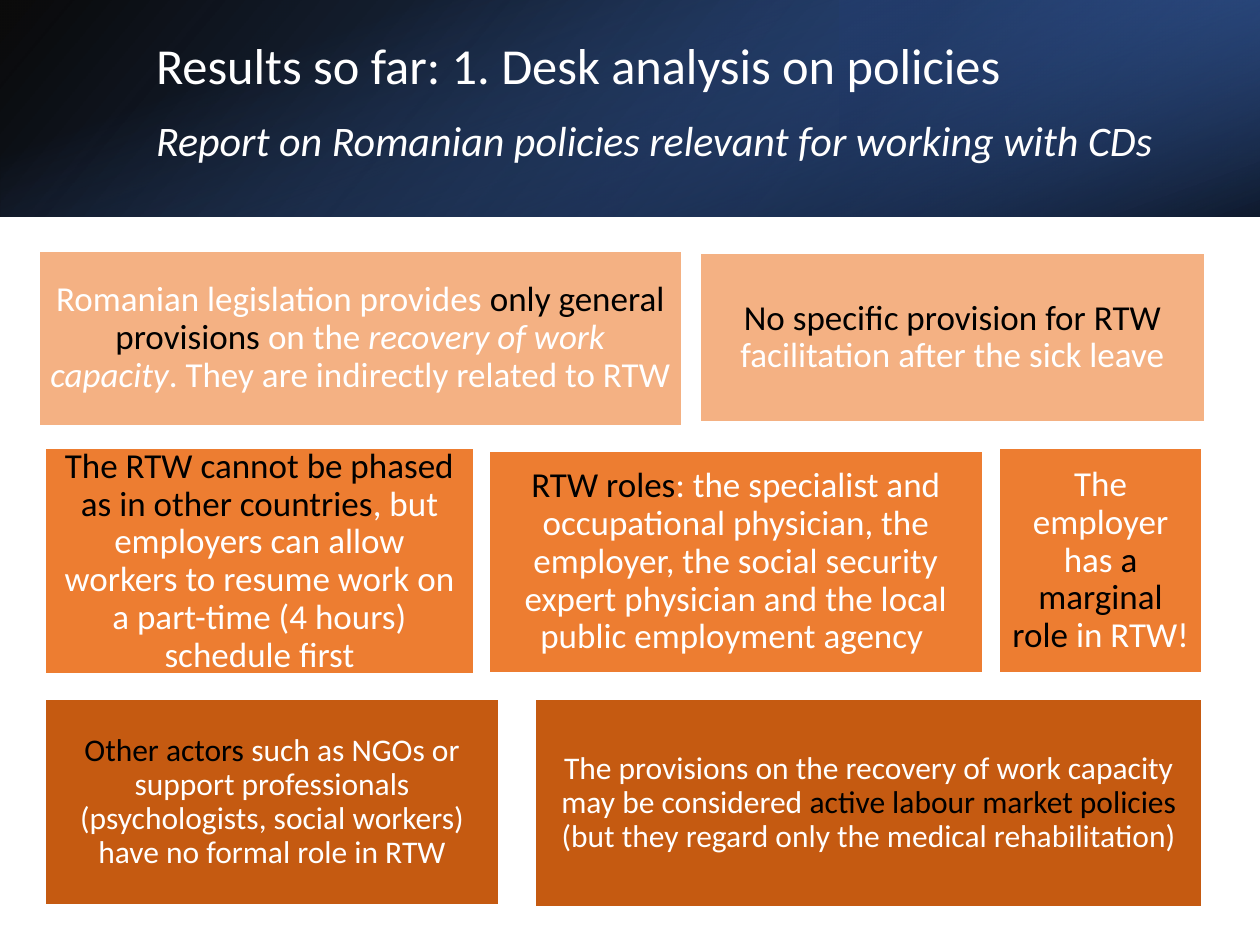
from lxml import etree
from pptx import Presentation
from pptx.dml.color import RGBColor
from pptx.enum import shapes, text
from pptx.oxml import ns
from pptx.util import Inches, Pt

FONT = "Calibri"
WHITE, BLACK = "FFFFFF", "000000"
PEACH, ORANGE, RUST = "F4B183", "ED7D31", "C55A11"

CARDS = [
    ((0.31, 1.99, 5.1, 1.39), PEACH, 20, [
        ("Romanian legislation provides ", WHITE, False),
        ("only general provisions ", BLACK, False),
        ("on the ", WHITE, False),
        ("recovery of work capacity", WHITE, True),
        (". They are indirectly related to RTW ", WHITE, False)]),
    ((5.56, 2.01, 4, 1.34), PEACH, 20, [
        ("No specific provision for RTW ", BLACK, False),
        ("facilitation after the sick leave", WHITE, False)]),
    ((0.36, 3.56, 3.4, 1.79), ORANGE, 20, [
        ("The RTW cannot be phased as in other countries", BLACK, False),
        (", but employers can allow workers to resume work on a part-time "
         "(4 hours) schedule first", WHITE, False)]),
    ((3.88, 3.58, 3.92, 1.76), ORANGE, 20, [
        ("RTW roles", BLACK, False),
        (": the specialist and occupational physician, the employer, the social security "
         "expert physician and the local public employment agency ", WHITE, False)]),
    ((7.93, 3.56, 1.61, 1.78), ORANGE, 20, [
        ("The employer has ", WHITE, False),
        ("a marginal role ", BLACK, False),
        ("in RTW!", WHITE, False)]),
    ((0.36, 5.55, 3.6, 1.63), RUST, 18, [
        ("Other actors ", BLACK, False),
        ("such as NGOs or support professionals (psychologists, social workers) "
         "have no formal role in RTW", WHITE, False)]),
    ((4.25, 5.55, 5.29, 1.65), RUST, 18, [
        ("The provisions on the recovery of work capacity may be considered ", WHITE, False),
        ("active labour market policies ", BLACK, False),
        ("(but they regard only the medical rehabilitation)", WHITE, False)]),
]


def color(value):
    return RGBColor.from_string(value)


def add_run(paragraph, content, size, value, italic=False):
    run = paragraph.add_run()
    run.text = content
    run.font.name = FONT
    run.font.size = Pt(size)
    run.font.italic = italic
    run.font.color.rgb = color(value)


def add_rectangle(slide, box):
    shape = slide.shapes.add_shape(
        shapes.MSO_SHAPE.RECTANGLE, *[Inches(length) for length in box])
    shape.shadow.inherit = False
    return shape


def add_gradient(slide, box, stops, angle, rotation=0, flipped=False):
    shape = add_rectangle(slide, box)
    shape.rotation = rotation
    shape.line.fill.background()
    properties = shape._element.spPr
    if flipped:
        properties.xfrm.set("flipH", "1")
    gradient = etree.Element(ns.qn("a:gradFill"), rotWithShape="1")
    stop_list = etree.SubElement(gradient, ns.qn("a:gsLst"))
    for position, value, opacity in stops:
        stop = etree.SubElement(stop_list, ns.qn("a:gs"), pos=str(position * 1000))
        tint = etree.SubElement(stop, ns.qn("a:srgbClr"), val=value)
        etree.SubElement(tint, ns.qn("a:alpha"), val=str(opacity * 1000))
    etree.SubElement(gradient, ns.qn("a:lin"), ang=str(angle * 60000), scaled="0")
    properties.find(ns.qn("a:prstGeom")).addnext(gradient)


def add_heading(slide, box, content, size, italic, anchor):
    shape = slide.shapes.add_textbox(*[Inches(length) for length in box])
    frame = shape.text_frame
    frame.word_wrap = True
    frame.vertical_anchor = anchor
    add_run(frame.paragraphs[0], content, size, WHITE, italic)
    return frame.paragraphs[0]


def add_banner(slide, left, top, width, height):
    add_gradient(slide, (left, top, width, height),
                 [(0, BLACK, 96), (100, "2F5597", 100)], 140, flipped=True)
    add_gradient(slide, (left + width * 2 / 3, top, width / 3, height),
                 [(19, "203864", 68), (100, "4472C4", 79)], 320, 180, True)
    offset = (width - height) / 2
    add_gradient(slide, (left + offset, top - offset, height, width),
                 [(23, "4472C4", 0), (99, BLACK, 74)], 340, 90)
    title = add_heading(slide, (left + 1.14, top + 0.25, 8.24, 0.58),
                        "Results so far: 1. Desk analysis on policies",
                        28.8, False, text.MSO_ANCHOR.MIDDLE)
    title.line_spacing = 0.9
    add_heading(slide, (left + 1.14, top + 0.86, 8.43, 0.5),
                "Report on Romanian policies relevant for working with CDs",
                24, True, text.MSO_ANCHOR.TOP)


def add_card(slide, box, fill, size, runs):
    shape = add_rectangle(slide, box)
    shape.fill.solid()
    shape.fill.fore_color.rgb = color(fill)
    shape.line.color.rgb = color(WHITE)
    shape.line.width = Pt(1)
    frame = shape.text_frame
    frame.word_wrap = True
    frame.vertical_anchor = text.MSO_ANCHOR.MIDDLE
    inset = Inches(0.08 if fill == PEACH else 0.07)
    frame.margin_left = frame.margin_right = inset
    frame.margin_top = frame.margin_bottom = inset
    paragraph = frame.paragraphs[0]
    paragraph.alignment = text.PP_ALIGN.CENTER
    paragraph.line_spacing = 0.9
    for content, value, italic in runs:
        add_run(paragraph, content, size, value, italic)


def main():
    presentation = Presentation()
    presentation.slide_width = Inches(10)
    presentation.slide_height = Inches(7.5)
    slide = presentation.slides.add_slide(presentation.slide_layouts[6])
    add_banner(slide, 0, 0, 10, 1.72)
    for card in CARDS:
        add_card(slide, *card)
    presentation.save("out.pptx")


if __name__ == "__main__":
    main()
